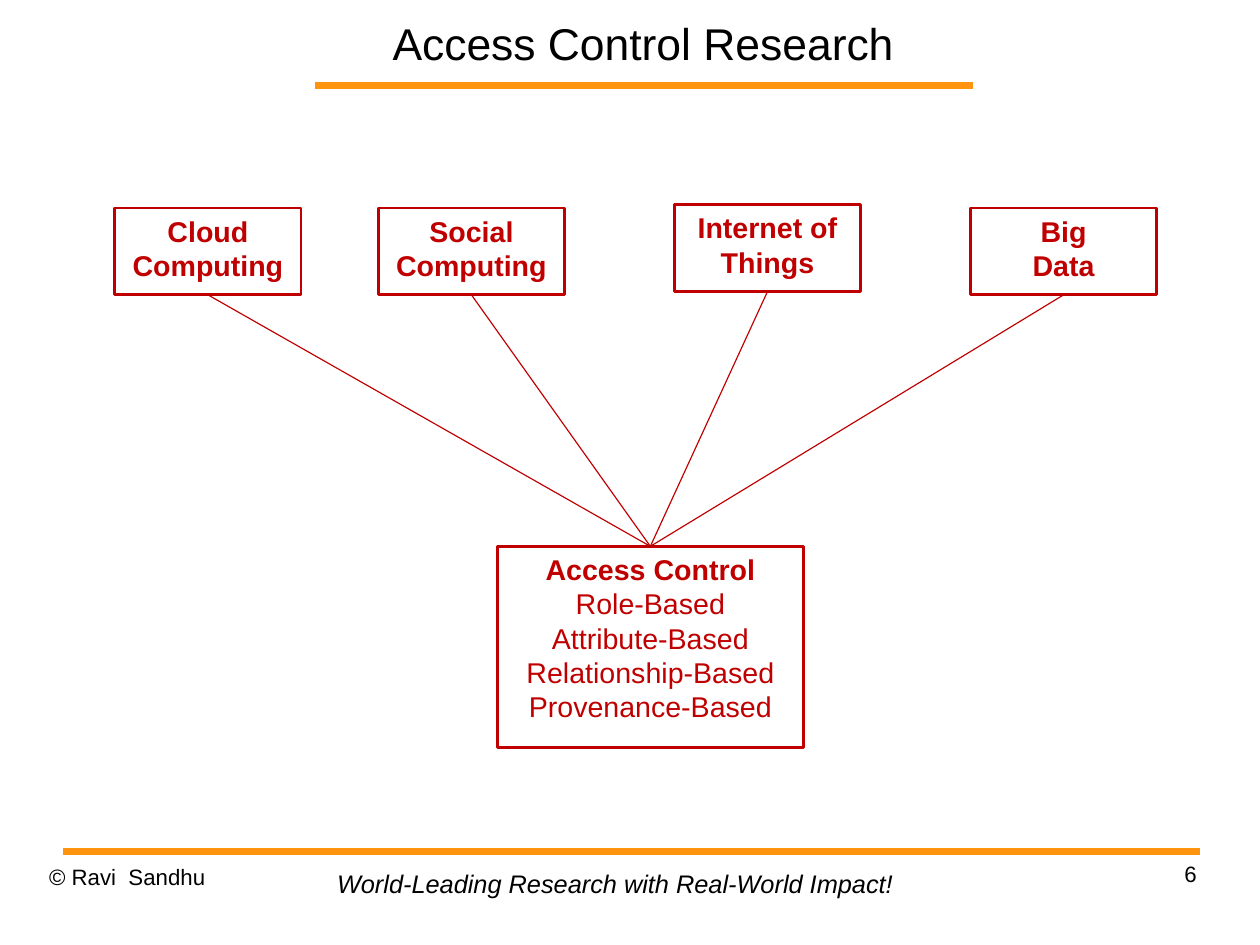
from lxml import etree
from pptx import Presentation
from pptx.dml.color import RGBColor
from pptx.enum import shapes, text
from pptx.oxml.ns import qn
from pptx.util import Cm, Inches, Pt

COLORS = {"ink": "000000", "rule": "FF950E", "accent": "C00000"}
SLIDE_CM = (28, 21)
TOPIC_SIZE = (1.63, 0.76)
TOPIC_STEP = 2.59
BOTTOM, TOP = 2, 0

# topic, column position, drop below the row's top
TOPICS = [
    ("Cloud Computing", 0.11, 0.03),
    ("Social Computing", 1, 0.03),
    ("Internet of Things", 2, 0),
    ("Big\nData", 3, 0.03),
]
MODELS = ["Attribute-Based", "Relationship-Based", "Provenance-Based"]


def inches(*lengths):
    return [Inches(length) for length in lengths]


def color(name):
    return RGBColor.from_string(COLORS[name])


def add_run(paragraph, words, ink="ink", **font_format):
    run = paragraph.add_run()
    run.text = words
    for key, value in {"name": "Arial", **font_format}.items():
        setattr(run.font, key, value)
    run.font.color.rgb = color(ink)


def set_frame(frame, inset=None, **frame_format):
    for key, value in frame_format.items():
        setattr(frame, key, value)
    if inset is not None:
        for side in ("left", "top", "right", "bottom"):
            setattr(frame, f"margin_{side}", inset)


def add_line(slide, start, end, ink, width):
    line = slide.shapes.add_connector(
        shapes.MSO_CONNECTOR.STRAIGHT, *inches(*start, *end))
    line.line.color.rgb = color(ink)
    line.line.width = Pt(width)
    etree.SubElement(line._element.spPr, qn("a:effectLst"))
    return line


def add_box(slide, box, paragraphs):
    """Outlined rectangle; each paragraph is a list of (words, bold) runs."""
    rect = slide.shapes.add_shape(shapes.MSO_SHAPE.RECTANGLE, *inches(*box))
    rect.shadow.inherit = False
    rect.fill.background()
    rect.line.color.rgb = color("accent")
    rect.line.width = Pt(1.75)
    frame = rect.text_frame
    set_frame(frame, word_wrap=True, vertical_anchor=text.MSO_ANCHOR.TOP)
    for index, runs in enumerate(paragraphs):
        paragraph = frame.add_paragraph() if index else frame.paragraphs[0]
        paragraph.alignment = text.PP_ALIGN.CENTER
        for words, bold in runs:
            add_run(paragraph, words, "accent", size=Pt(18), bold=bold)
    return rect


def add_header(slide, box):
    left, top, width, height = box
    title = slide.shapes.title
    title.left, title.top, title.width, title.height = inches(*box)
    set_frame(title.text_frame, inset=0, word_wrap=True,
              vertical_anchor=text.MSO_ANCHOR.MIDDLE)
    paragraph = title.text_frame.paragraphs[0]
    paragraph.alignment = text.PP_ALIGN.CENTER
    add_run(paragraph, "Access Control Research", size=Pt(28))
    base = top + height
    add_line(slide, (left + 0.35, base), (left + width - 0.33, base), "rule", 4.31)


def add_diagram(slide, box):
    left, top, width, height = box
    models_size = (2.68, 1.76)
    models = add_box(
        slide,
        (left + 3.35, top + height - models_size[1], *models_size),
        [[("Access Control ", True), ("Role-Based", False)]]
        + [[(model, False)] for model in MODELS])
    first = left + width - TOPIC_SIZE[0] - 3 * TOPIC_STEP
    for topic, column, drop in TOPICS:
        topic_box = add_box(
            slide, (first + column * TOPIC_STEP, top + drop, *TOPIC_SIZE),
            [[(words, True)] for words in topic.split("\n")])
        link = add_line(slide, (0, 0), (1, 1), "accent", 0.75)
        link.begin_connect(topic_box, BOTTOM)
        link.end_connect(models, TOP)


def add_footer(slide, box):
    left, top, width, height = box
    add_line(slide, (left, top), (left + width, top), "rule", 4.31)
    side, tall = 2.57, 0.57
    right = left + width - side - 0.03
    align = text.PP_ALIGN
    parts = [
        ("6", (right, top + 0.08, side, tall), align.RIGHT, 0, True, 14, False),
        ("© Ravi  Sandhu", (left - 0.12, top + 0.1, side, tall),
         align.LEFT, 0, True, 14, False),
        ("World-Leading Research with Real-World Impact!",
         (left + 2.3, top + 0.1, 5.08, 0.37), align.LEFT, None, False, 16, True),
    ]
    for words, place, alignment, inset, wrap, size, italic in parts:
        frame = slide.shapes.add_textbox(*inches(*place)).text_frame
        set_frame(frame, inset=inset, word_wrap=wrap)
        frame.paragraphs[0].alignment = alignment
        add_run(frame.paragraphs[0], words, size=Pt(size), italic=italic)


def main():
    deck = Presentation()
    deck.slide_width, deck.slide_height = (Cm(side) for side in SLIDE_CM)
    slide = deck.slides.add_slide(deck.slide_layouts[5])
    add_header(slide, (2.41, 0, 6.43, 0.75))
    add_diagram(slide, (1, 1.79, 9.12, 4.75))
    add_footer(slide, (0.55, 7.45, 9.95, 0.67))
    deck.save("out.pptx")


if __name__ == "__main__":
    main()
